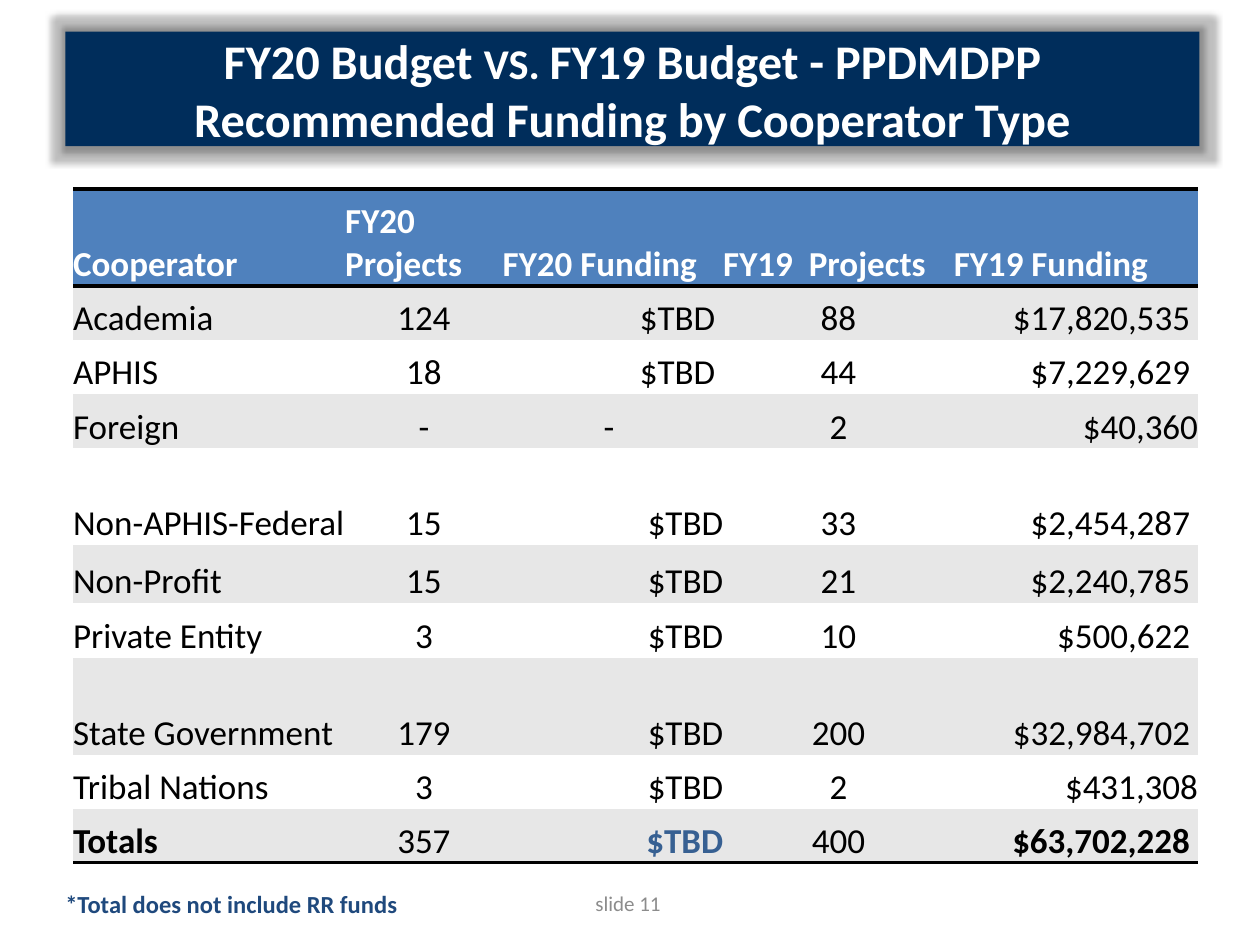
"""Build the FY20 versus FY19 funding slide by cooperator type."""
import pptx
import pptx.dml.color
import pptx.enum.shapes
import pptx.enum.text
import pptx.oxml
import pptx.util

Inches, Pt = pptx.util.Inches, pptx.util.Pt
ALIGN = pptx.enum.text.PP_ALIGN
ANCHOR = pptx.enum.text.MSO_ANCHOR
NS = 'xmlns:a="http://schemas.openxmlformats.org/drawingml/2006/main"'


def rgb(value):
    return pptx.dml.color.RGBColor.from_string(value)


def style(p, size, color, bold=False, align=ALIGN.LEFT):
    p.alignment = align
    p.font.name = "Calibri"
    p.font.size = Pt(size)
    p.font.bold = bold
    p.font.color.rgb = rgb(color)


prs = pptx.Presentation()
prs.slide_width, prs.slide_height = Inches(10), Inches(7.5)
s = prs.slides.add_slide(prs.slide_layouts[6])

title = s.shapes.add_shape(pptx.enum.shapes.MSO_SHAPE.RECTANGLE,
                           Inches(0.52), Inches(0.25), Inches(9), Inches(0.91))
title.fill.solid()
title.fill.fore_color.rgb = rgb("002D5B")
title.line.fill.background()
title.shadow.inherit = False
title.element.spPr.find(pptx.oxml.ns.qn("a:effectLst")).append(pptx.oxml.parse_xml(
    f'<a:glow {NS} rad="{Inches(0.09)}"><a:srgbClr val="000000">'
    '<a:alpha val="25000"/></a:srgbClr></a:glow>'))
tf = title.text_frame
tf.word_wrap = True
tf.vertical_anchor = ANCHOR.MIDDLE
p = tf.paragraphs[0]
for text, size in [("FY20 Budget ", 27.6), ("VS. ", 24.2), ("FY19 Budget - PPDMDPP", 27.6)]:
    r = p.add_run()
    r.text = text
    r.font.size = Pt(size)
tf.add_paragraph().text = "Recommended Funding by Cooperator Type"
for p in tf.paragraphs:
    style(p, 27.6, "FFFFFF", True, ALIGN.CENTER)

rows = [
    ["Cooperator", "FY20 Projects", "FY20 Funding", "FY19  Projects", "FY19 Funding"],
    ["Academia", "124", "$TBD ", "88", "$17,820,535 "],
    ["APHIS", "18", "$TBD ", "44", "$7,229,629 "],
    ["Foreign", "-", "- ", "2", "$40,360"],
    ["Non-APHIS-Federal", "15", "$TBD", "33", "$2,454,287 "],
    ["Non-Profit", "15", "$TBD", "21", "$2,240,785 "],
    ["Private Entity", "3", "$TBD", "10", "$500,622 "],
    ["State Government", "179", "$TBD", "200", "$32,984,702 "],
    ["Tribal Nations", "3", "$TBD", "2", "$431,308"],
    ["Totals", "357", "$TBD", "400", "$63,702,228 "],
]
widths = [2.16, 1.25, 1.75, 1.83, 1.94]
heights = [0.77, 0.43, 0.43, 0.43, 0.77, 0.46, 0.43, 0.77, 0.43, 0.43]
aligns = [ALIGN.LEFT, ALIGN.CENTER, ALIGN.RIGHT, ALIGN.CENTER, ALIGN.RIGHT]
last = len(rows) - 1

table = s.shapes.add_table(len(rows), len(widths), Inches(0.58), Inches(1.5),
                           Inches(sum(widths)), Inches(sum(heights))).table
table.first_row = table.horz_banding = False
table._tbl.tblPr.find(pptx.oxml.ns.qn("a:tableStyleId")).text = (
    "{2D5ABB26-0587-4C30-8999-92F81FD0307C}")
for column, width in zip(table.columns, widths):
    column.width = Inches(width)

for i, values in enumerate(rows):
    table.rows[i].height = Inches(heights[i])
    fill = "4F81BD" if i == 0 else "E7E7E7" if i % 2 else "FFFFFF"
    edges = {0: ["lnB", "lnT"], last: ["lnB"]}.get(i, [])
    for j, text in enumerate(values):
        cell = table.cell(i, j)
        cell.margin_left = cell.margin_right = cell.margin_top = cell.margin_bottom = 0
        cell.vertical_anchor = ANCHOR.BOTTOM
        cell.fill.solid()
        cell.fill.fore_color.rgb = rgb(fill)
        cell.text = text
        align = ALIGN.LEFT if i == 0 else ALIGN.CENTER if text == "- " else aligns[j]
        color = "FFFFFF" if i == 0 else "376092" if (i, j) == (last, 2) else "000000"
        bold = i == 0 or (i == last and j % 2 == 0)
        style(cell.text_frame.paragraphs[0], 20, color, bold, align)
        for edge in edges:
            cell._tc.get_or_add_tcPr().insert(0, pptx.oxml.parse_xml(
                f'<a:{edge} {NS} w="{Pt(2)}"><a:solidFill><a:srgbClr val="000000"/>'
                f'</a:solidFill></a:{edge}>'))

footers = [
    ("slide 11", 3.82, 6.97, 2.33, 0.4, ANCHOR.MIDDLE, 12, "8C8C8C", False, ALIGN.CENTER),
    ("*Total does not include RR funds", 0.42, 7.01, 4.33, 0.34, ANCHOR.TOP,
     14, "1F497D", True, ALIGN.LEFT),
]
for text, left, top, width, height, anchor, size, color, bold, align in footers:
    sp = s.shapes.add_textbox(Inches(left), Inches(top), Inches(width), Inches(height))
    tf = sp.text_frame
    tf.word_wrap = True
    tf.vertical_anchor = anchor
    tf.text = text
    style(tf.paragraphs[0], size, color, bold, align)

prs.save("out.pptx")
